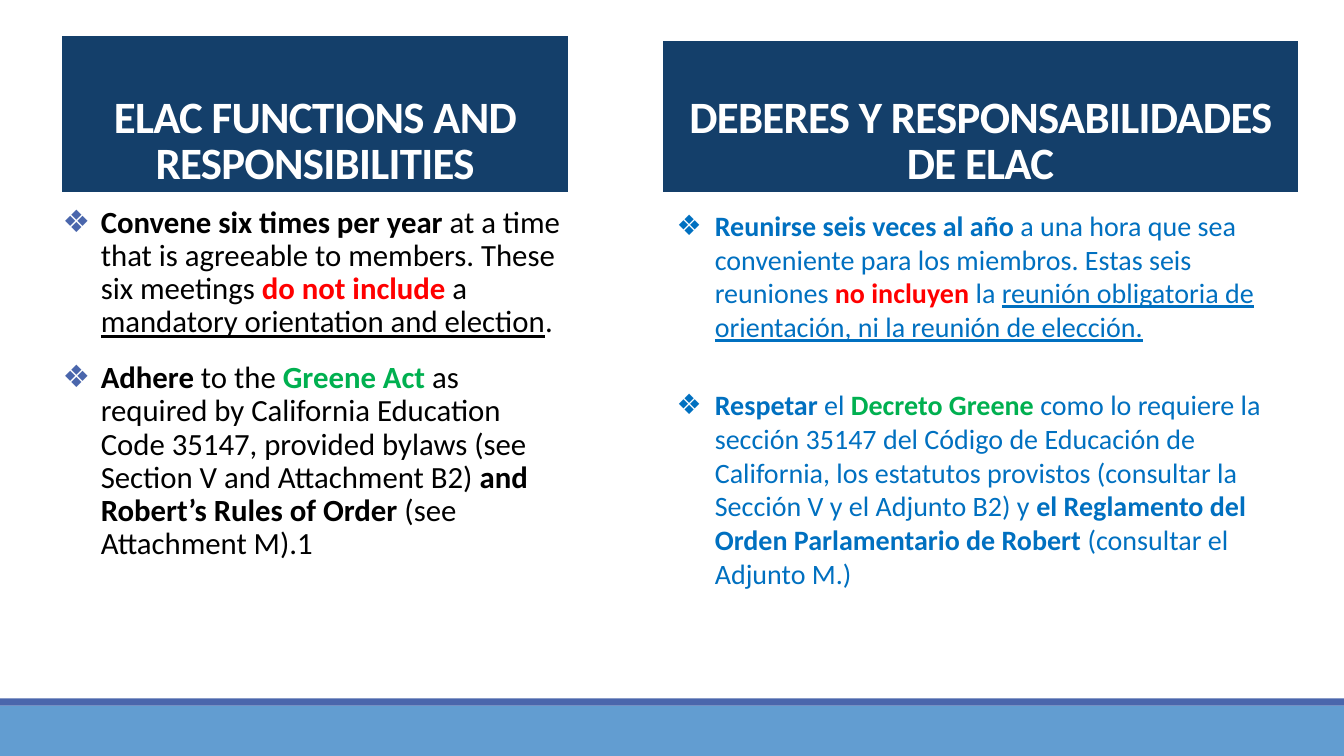
import pptx
import pptx.util
import pptx.dml.color
import pptx.enum.shapes
import pptx.enum.text
import pptx.oxml
import pptx.oxml.ns
from dataclasses import dataclass

Inches, Pt = pptx.util.Inches, pptx.util.Pt
RGB = pptx.dml.color.RGBColor.from_string
RECT = pptx.enum.shapes.MSO_SHAPE.RECTANGLE
ALIGN = pptx.enum.text.PP_ALIGN
ANCHOR = pptx.enum.text.MSO_ANCHOR
NO_FIT = pptx.enum.text.MSO_AUTO_SIZE.NONE


@dataclass(frozen=True)
class Theme:
    font: str = "Calibri"
    navy: str = "143F6A"
    white: str = "FFFFFF"
    black: str = "000000"
    blue: str = "0070C0"
    red: str = "FF0000"
    green: str = "00B050"
    accent: str = "4A66AC"
    footer: str = "629DD1"
    heading_size: int = 32
    english_size: int = 22
    spanish_size: int = 20


T = Theme()

# Run styles: font settings, with an optional colour replacing the list's own
STYLES = {
    "plain": ({}, None),
    "bold": ({"bold": True}, None),
    "under": ({"underline": True}, None),
    "red": ({"bold": True}, T.red),
    "green": ({"bold": True}, T.green),
}

ENGLISH = [
    [("Convene six times per year ", "bold"),
     ("at a time that is agreeable to members. These six meetings ", "plain"),
     ("do not include ", "red"), ("a ", "plain"),
     ("mandatory orientation and election", "under"), (".", "plain")],
    [("Adhere", "bold"), (" to the ", "plain"), ("Greene Act ", "green"),
     ("as required by California Education Code 35147, provided bylaws "
      "(see Section V and Attachment B2) ", "plain"),
     ("and Robert’s Rules of Order", "bold"),
     (" (see Attachment M).1", "plain")],
]
SPANISH = [
    [("Reunirse seis veces al año ", "bold"),
     ("a una hora que sea conveniente para los miembros. "
      "Estas seis reuniones ", "plain"),
     ("no incluyen ", "red"), ("la ", "plain"),
     ("reunión obligatoria de orientación, ni la reunión de elección.",
      "under")],
    [("Respetar", "bold"), (" el ", "plain"), ("Decreto Greene ", "green"),
     ("como lo requiere la sección 35147 del Código de Educación de "
      "California, los estatutos provistos (consultar la Sección V y el "
      "Adjunto B2) y ", "plain"),
     ("el Reglamento del Orden Parlamentario de Robert ", "bold"),
     ("(consultar el Adjunto M.)", "plain")],
]


def set_all(obj, values):
    for name, value in values.items():
        setattr(obj, name, value)


def place(sp, box):
    for name, value in zip(("left", "top", "width", "height"), box):
        setattr(sp, name, Inches(value))


def add_run(p, text, color, size, **fmt):
    r = p.add_run()
    r.text = text
    set_all(r.font, {"name": T.font, "size": Pt(size), "bold": False, **fmt})
    r.font.color.rgb = RGB(color)
    return r


def add_bullet(p, color):
    pPr = p._p.get_or_add_pPr()
    pPr.set("marL", str(Inches(0.38)))
    pPr.set("indent", str(Inches(-0.38)))
    ns = pptx.oxml.ns.nsdecls("a")
    for xml in (f'<a:buClr {ns}><a:srgbClr val="{color}"/></a:buClr>',
                f'<a:buChar {ns} char="❖"/>'):
        pPr.append(pptx.oxml.parse_xml(xml))


def add_bar(s, box, color):
    sp = s.shapes.add_shape(RECT, *map(Inches, box))
    sp.shadow.inherit = False
    sp.fill.solid()
    sp.fill.fore_color.rgb = RGB(color)
    sp.line.fill.background()
    return sp


def footer_bands(s, box):
    left, top, width, height = box
    rule = 0.07
    add_bar(s, (left, top + rule, width, height - rule), T.footer)
    add_bar(s, (left, top, width, rule), T.accent)


def heading(sp, box, text):
    place(sp, box)
    sp.fill.solid()
    sp.fill.fore_color.rgb = RGB(T.navy)
    sp.line.color.rgb = RGB(T.white)
    sp.line.width = Pt(2.25)
    tf = sp.text_frame
    set_all(tf, {"word_wrap": True, "auto_size": NO_FIT,
                 "vertical_anchor": ANCHOR.BOTTOM})
    p = tf.paragraphs[0]
    set_all(p, {"alignment": ALIGN.CENTER, "line_spacing": 0.85})
    r = add_run(p, text, T.white, T.heading_size, bold=True)
    r.font._element.set("spc", "-50")


def duties(sp, box, items, color, size, bullet, inset, spacing, gap):
    place(sp, box)
    tf = sp.text_frame
    set_all(tf, {"word_wrap": True, "auto_size": NO_FIT,
                 "vertical_anchor": ANCHOR.TOP,
                 "margin_left": Inches(inset), "margin_right": Inches(inset)})
    for i, runs in enumerate(items):
        p = tf.add_paragraph() if i else tf.paragraphs[0]
        add_bullet(p, bullet)
        set_all(p, {"alignment": ALIGN.LEFT, "line_spacing": spacing,
                    "space_before": Pt(gap if i else 0),
                    "space_after": Pt(4)})
        for text, style in runs:
            fmt, own = STYLES[style]
            add_run(p, text, own or color, size, **fmt)


def main():
    prs = pptx.Presentation()
    prs.slide_width, prs.slide_height = Inches(13.33), Inches(7.5)
    s = prs.slides.add_slide(prs.slide_layouts.get_by_name("Two Content"))
    title, english, spanish = s.placeholders

    footer_bands(s, (0, 6.93, 13.33, 0.57))

    # English column
    heading(title, (0.6, 0.34, 5.05, 1.58),
            "ELAC FUNCTIONS AND RESPONSIBILITIES")
    duties(english, (0.62, 2, 4.99, 4.22), ENGLISH, T.black, T.english_size,
           T.accent, inset=0, spacing=0.9, gap=12)

    # Spanish column
    box = (6.56, 0.39, 6.33, 1.53)
    heading(add_bar(s, box, T.navy), box,
            "DEBERES Y RESPONSABILIDADES DE ELAC")
    duties(spanish, (6.61, 2.02, 6.39, 3.92), SPANISH, T.blue, T.spanish_size,
           T.blue, inset=0.1, spacing=1.0, gap=28)

    prs.save("out.pptx")


if __name__ == "__main__":
    main()
